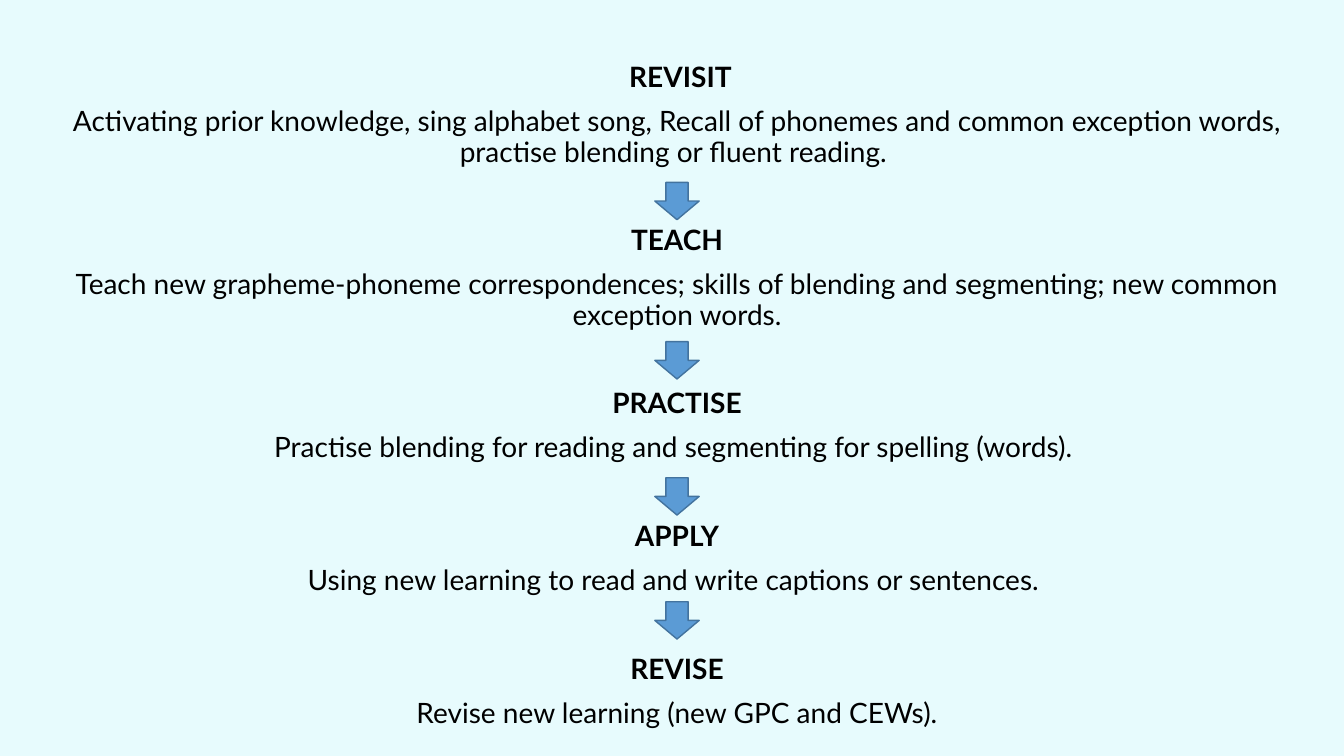
from dataclasses import dataclass

from lxml import etree
from pptx import Presentation
from pptx.dml.color import RGBColor as RGB
from pptx.enum.shapes import MSO_SHAPE as SHAPE
from pptx.enum.text import MSO_ANCHOR as ANCHOR, MSO_AUTO_SIZE as AUTO_SIZE, PP_ALIGN as ALIGN
from pptx.oxml.ns import qn
from pptx.util import Inches, Pt


@dataclass(frozen=True)
class Theme:
    background: RGB = RGB.from_string("E7FBFD")
    text: RGB = RGB.from_string("000000")
    arrow: RGB = RGB.from_string("5B9BD5")
    arrow_line: RGB = RGB.from_string("43739E")
    font: str = "Lato"
    size: float = 20
    line_spacing: float = 0.9
    detail_gap: float = 10
    stage_gap: float = 41.6


THEME = Theme()

STAGES = [
    (" REVISIT", "Activating prior knowledge, sing alphabet song, Recall of phonemes and "
                 "common exception words, practise blending or fluent reading. "),
    ("TEACH", "Teach new grapheme-phoneme correspondences; skills of blending and "
              "segmenting; new common exception words."),
    ("PRACTISE", "Practise blending for reading and segmenting for spelling (words). "),
    ("APPLY", "Using new learning to read and write captions or sentences. "),
    ("REVISE", "Revise new learning (new GPC and CEWs)."),
]
STAGES_BOX = (0.24, 0.58, 12.95, 6.61)
ARROW_SIZE = (0.44, 0.37)
ARROW_TOPS = [1.81, 3.39, 4.74, 5.97]


def write_paragraph(p, text, bold=False, before=0):
    p.alignment = ALIGN.CENTER
    p.line_spacing = THEME.line_spacing
    p.space_before = Pt(before)
    p.space_after = Pt(0)
    pPr = p._p.get_or_add_pPr()
    pPr.set("marL", "0")
    pPr.set("indent", "0")
    etree.SubElement(pPr, qn("a:buNone"))
    r = p.add_run()
    r.text = text
    r.font.name = THEME.font
    r.font.size = Pt(THEME.size)
    r.font.bold = bold
    r.font.color.rgb = THEME.text


def add_stages(body, box):
    """Fill the body placeholder with a bold heading and a detail line per stage."""
    body.left, body.top, body.width, body.height = map(Inches, box)
    tf = body.text_frame
    tf.word_wrap = True
    tf.auto_size = AUTO_SIZE.NONE
    tf.vertical_anchor = ANCHOR.TOP
    for i, (heading, detail) in enumerate(STAGES):
        p = tf.add_paragraph() if i else tf.paragraphs[0]
        write_paragraph(p, heading, bold=True, before=THEME.stage_gap if i else 0)
        write_paragraph(tf.add_paragraph(), detail, before=THEME.detail_gap)


def add_arrows(s, box):
    """Centre the down arrows across the box."""
    left, _, box_width, _ = box
    width, height = ARROW_SIZE
    x = left + (box_width - width) / 2
    for y in ARROW_TOPS:
        arrow = s.shapes.add_shape(SHAPE.DOWN_ARROW, *map(Inches, (x, y, width, height)))
        arrow.shadow.inherit = False
        arrow.fill.solid()
        arrow.fill.fore_color.rgb = THEME.arrow
        arrow.line.color.rgb = THEME.arrow_line
        arrow.line.width = Pt(1)


def build_lesson_sequence(prs):
    s = prs.slides.add_slide(prs.slide_layouts.get_by_name("Title and Content"))
    s.background.fill.solid()
    s.background.fill.fore_color.rgb = THEME.background
    title = s.shapes.title._element
    title.getparent().remove(title)
    add_stages(s.placeholders[1], STAGES_BOX)
    add_arrows(s, STAGES_BOX)


def main():
    prs = Presentation()
    prs.slide_width, prs.slide_height = Inches(13.33), Inches(7.5)
    build_lesson_sequence(prs)
    prs.save("out.pptx")


if __name__ == "__main__":
    main()
